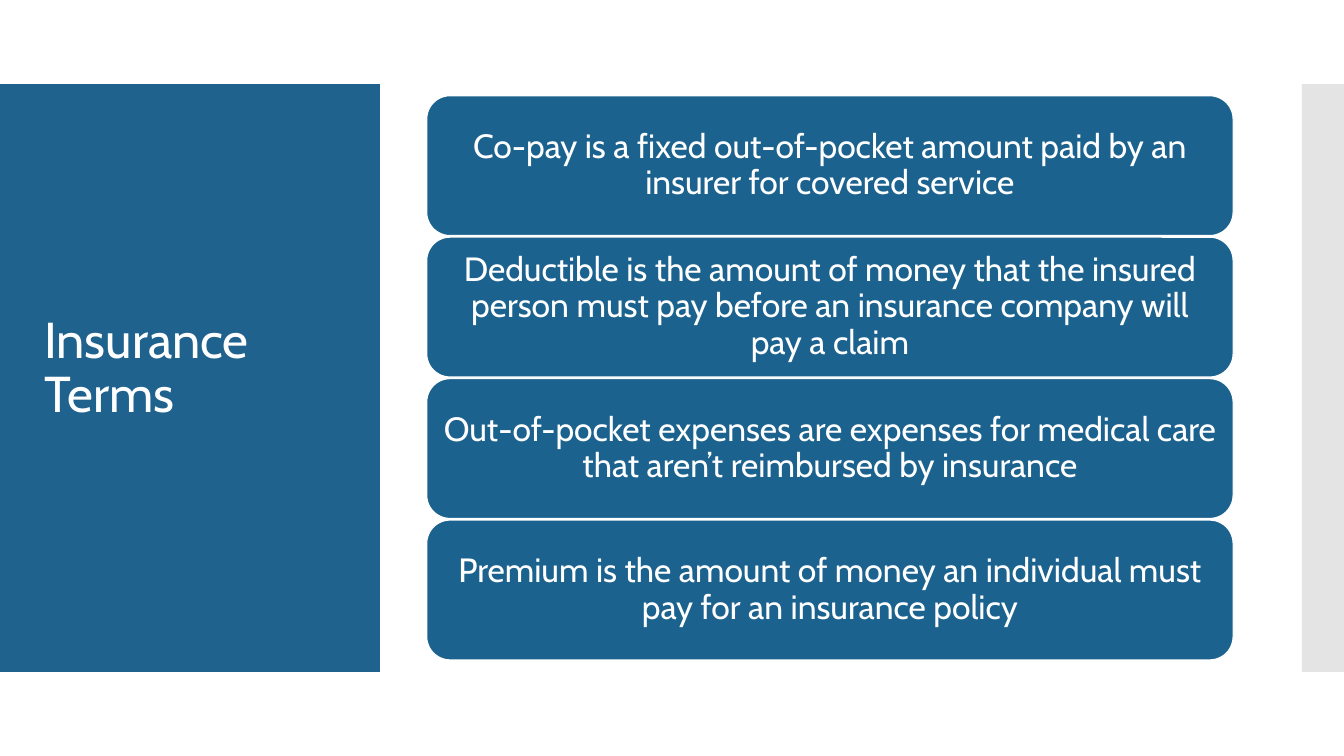
import lxml.etree
import pptx
import pptx.dml.color
import pptx.enum.shapes
import pptx.enum.text
import pptx.oxml.ns
import pptx.util

SHAPE = pptx.enum.shapes.MSO_SHAPE
ALIGN = pptx.enum.text.PP_ALIGN
COLUMNS, ROWS = 160, 90
TERMS = [
    "Co-pay is a fixed out-of-pocket amount paid by an insurer for covered service",
    "Deductible is the amount of money that the insured person must pay before "
    "an insurance company will pay a claim",
    "Out-of-pocket expenses are expenses for medical care that aren’t reimbursed by insurance",
    "Premium is the amount of money an individual must pay for an insurance policy",
]


def colour(hex_value):
    return pptx.dml.color.RGBColor.from_string(hex_value)


class TermsSlide:
    """Draws elements on one slide, measured in grid columns and rows."""

    font = {"name": "Cabin"}
    white, panel_blue, card_blue, grey = "FFFFFF", "1F628E", "1C628E", "C8C8C8"

    def __init__(self, deck):
        self.slide = deck.slides.add_slide(deck.slide_layouts[5])
        self.column = deck.slide_width / COLUMNS
        self.row = deck.slide_height / ROWS

    def place(self, left, top, width, height):
        return [round(length * unit) for length, unit in
                zip((left, top, width, height), (self.column, self.row) * 2)]

    def wording(self, frame, text, size, align, margins):
        frame.text = text
        settings = {
            "word_wrap": True,
            "auto_size": pptx.enum.text.MSO_AUTO_SIZE.NONE,
            "vertical_anchor": pptx.enum.text.MSO_ANCHOR.MIDDLE,
            **{f"margin_{side}": pptx.util.Inches(inset) for side, inset in margins.items()},
        }
        for key, value in settings.items():
            setattr(frame, key, value)
        paragraph = frame.paragraphs[0]
        for key, value in {"alignment": align, "line_spacing": 0.9}.items():
            setattr(paragraph, key, value)
        font = paragraph.runs[0].font
        for key, value in {**self.font, "size": pptx.util.Pt(size)}.items():
            setattr(font, key, value)
        font.color.rgb = colour(self.white)

    def block(self, kind, box, fill, opacity=100):
        block = self.slide.shapes.add_shape(kind, *self.place(*box))
        block.shadow.inherit = False
        block.fill.solid()
        block.fill.fore_color.rgb = colour(fill)
        block.line.fill.background()
        if opacity < 100:
            tint = block._element.spPr.find(".//" + pptx.oxml.ns.qn("a:srgbClr"))
            alpha = lxml.etree.SubElement(tint, pptx.oxml.ns.qn("a:alpha"))
            alpha.set("val", str(opacity * 1000))
        return block

    def title(self, text, box):
        heading = self.slide.shapes.title
        for key, value in zip(("left", "top", "width", "height"), self.place(*box)):
            setattr(heading, key, value)
        self.wording(heading.text_frame, text, 36, ALIGN.LEFT,
                     {"left": 0.1, "right": 0.1, "top": 0.05, "bottom": 0.05})
        self.slide.shapes._spTree.append(heading._element)

    def card(self, text, box):
        card = self.block(SHAPE.ROUNDED_RECTANGLE, box, self.card_blue)
        card.adjustments[0] = 0.167
        card.line.color.rgb = colour(self.white)
        card.line.width = pptx.util.Pt(0.85)
        self.wording(card.text_frame, text, 24, ALIGN.CENTER,
                     dict.fromkeys(("left", "right", "top", "bottom"), 0.1))


def main():
    deck = pptx.Presentation()
    deck.slide_width = pptx.util.Inches(13.33)
    deck.slide_height = pptx.util.Inches(7.5)
    terms_slide = TermsSlide(deck)
    terms_slide.block(SHAPE.RECTANGLE, (0, 10, 45.24, 70), TermsSlide.panel_blue)
    terms_slide.block(SHAPE.RECTANGLE, (155, 10, 5, 70), TermsSlide.grey, opacity=49)
    terms_slide.title("Insurance Terms", (4.08, 13.8, 38.64, 60.36))
    for index, term in enumerate(TERMS):
        terms_slide.card(term, (50.8, 11.4 + index * 16.84, 96, 16.65))
    deck.save("out.pptx")


if __name__ == "__main__":
    main()
